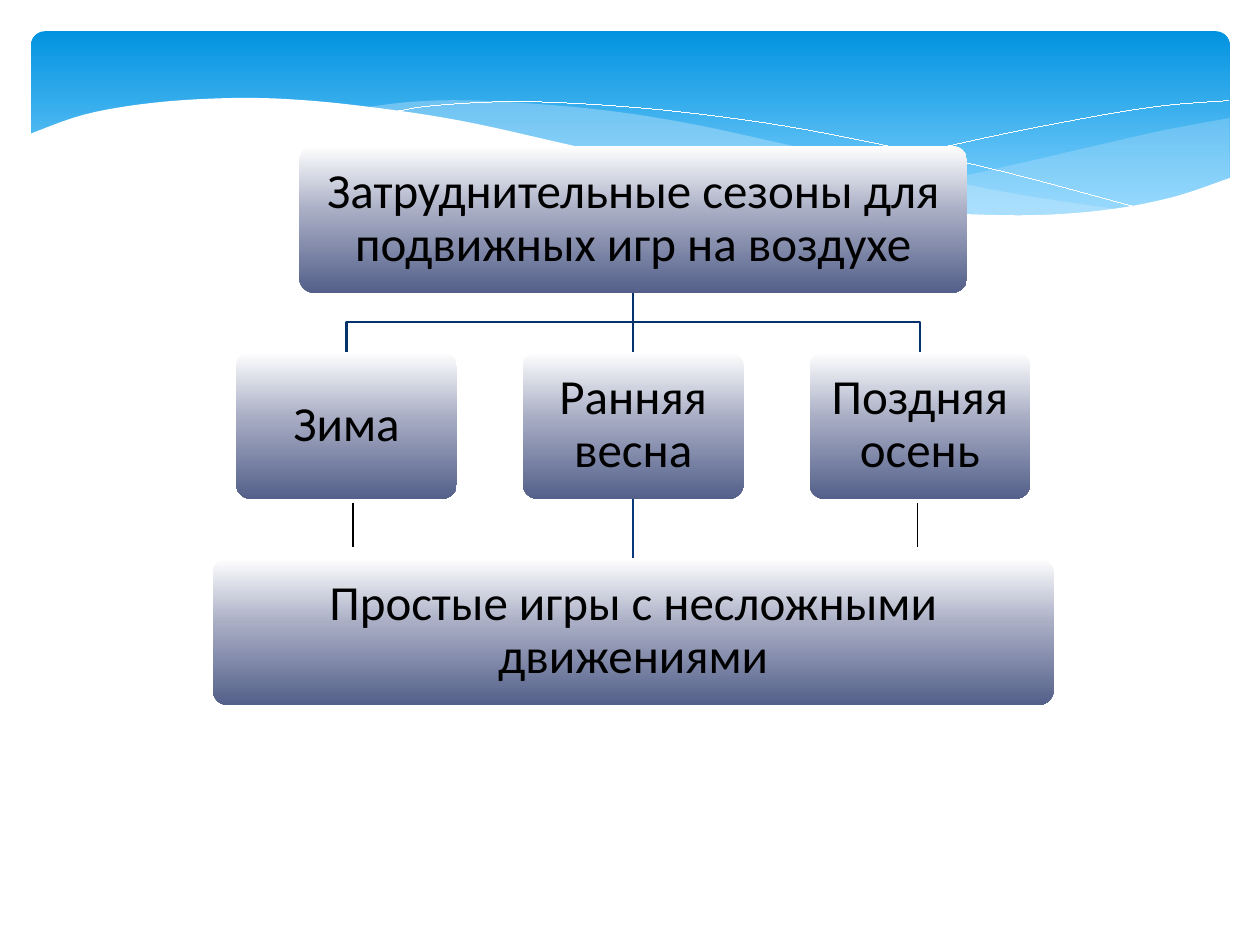
import copy

import pptx
import pptx.dml.color
import pptx.enum.shapes
import pptx.enum.text
import pptx.oxml.ns
import pptx.util
from lxml import etree

Cm = pptx.util.Cm
Pt = pptx.util.Pt
qn = pptx.oxml.ns.qn

COLORS = {
    "sky_top": "0293E0", "sky_bottom": "83D3FE", "wave": "C6E7FC",
    "white": "FFFFFF", "box_middle": "A9AEC5", "box_bottom": "54608A",
    "branch": "06326C", "stem": "06387B", "black": "000000",
}
SKY = [(0, "sky_top"), (0.9, "sky_bottom")]
BOX_FILL = [(0, "white"), (0.44, "box_middle"), (1, "box_bottom")]
HAIRLINE = 0.01
FONT = {"name": "Calibri", "size": Pt(28)}
PARAGRAPH = {"alignment": pptx.enum.text.PP_ALIGN.CENTER, "line_spacing": 0.9}
FRAME = {
    "word_wrap": True, "vertical_anchor": pptx.enum.text.MSO_ANCHOR.MIDDLE,
    "margin_left": Cm(0.25), "margin_right": Cm(0.25),
    "margin_top": Cm(0.3), "margin_bottom": Cm(0.3),
}

# Wave points in cm from the top left corner of the header band
RIGHT_WAVE = [
    [(24.16, 1.75), (22.76, 2.01), (21.23, 2.36), (19.15, 2.84), (17.3, 3.23), (16.15, 3.43)],
    [(16.15, 3.43), (17.63, 3.61), (19.2, 3.73), (20.57, 3.73), (21.74, 3.61),
     (22.94, 3.38), (24.16, 2.95)],
]
MIDDLE_WAVE = [
    [(22.05, 3.61), (19.86, 3.28), (17.3, 2.77), (15.34, 2.31), (13.11, 1.83),
     (11.18, 1.55), (9.02, 1.4), (7.7, 1.42), (6.63, 1.55)],
    [(6.63, 1.55), (8.05, 1.75), (9.63, 2.06), (11.84, 2.57), (14.2, 3.07),
     (16.26, 3.45), (18.06, 3.66), (19.86, 3.76), (21.13, 3.71), (22.05, 3.61)],
]
FALLING_LINE = [(7.21, 1.65), (8.1, 1.5), (9.93, 1.42), (12.32, 1.55),
                (14.81, 1.85), (17.02, 2.26), (19.56, 2.82), (22.4, 3.58)]
RISING_LINE = [(14.94, 3.2), (17.02, 2.67), (19.08, 2.18), (21.36, 1.73),
               (22.83, 1.5), (24.13, 1.4)]
WHITE_WAVE = [
    [(24.18, 2.95), (22.99, 3.35), (21.59, 3.61), (19.91, 3.71), (17.81, 3.61),
     (15.27, 3.25), (12.8, 2.74), (10.72, 2.26), (8.64, 1.8), (6.78, 1.52),
     (5.21, 1.37), (3.86, 1.35), (2.39, 1.45), (1.07, 1.68), (-0.05, 2.08)],
    [(-0.05, 5.05), (24.18, 5.05)],
]


def rgb(name):
    return pptx.dml.color.RGBColor.from_string(COLORS[name])


def set_values(target, values):
    for name, value in values.items():
        setattr(target, name, value)


def smooth(points, steps=6):
    """Return a Catmull-Rom curve through the points."""
    if len(points) < 3:
        return points
    padded = [points[0], *points, points[-1]]
    curve = []
    for a, b, c, d in zip(padded, padded[1:], padded[2:], padded[3:]):
        for step in range(steps):
            t = step / steps
            curve.append(tuple(
                q + t / 2 * (r - p + t * (2 * p - 5 * q + 4 * r - s + t * (3 * (q - r) + s - p)))
                for p, q, r, s in zip(a, b, c, d)))
    return curve + [points[-1]]


def add_outline(slide, points, left=0, top=0, fill=None, opacity=100, line=None, width=HAIRLINE):
    placed = [(Cm(left + x), Cm(top + y)) for x, y in points]
    builder = slide.shapes.build_freeform(*placed[0])
    builder.add_line_segments(placed[1:], close=fill is not None)
    shape = builder.convert_to_shape()
    shape.shadow.inherit = False
    if fill:
        shape.fill.solid()
        shape.fill.fore_color.rgb = rgb(fill)
        color = shape._element.spPr.find(qn("a:solidFill"))[0]
        etree.SubElement(color, qn("a:alpha"), val=str(opacity * 1000))
    else:
        shape.fill.background()
    if line:
        shape.line.color.rgb = rgb(line)
        shape.line.width = Pt(width)
    else:
        shape.line.fill.background()


def add_gradient_box(slide, left, top, width, height, corner, stops):
    shape = slide.shapes.add_shape(
        pptx.enum.shapes.MSO_SHAPE.ROUNDED_RECTANGLE, Cm(left), Cm(top), Cm(width), Cm(height))
    shape.adjustments[0] = corner
    shape.shadow.inherit = False
    shape.line.fill.background()
    shape.fill.gradient()
    shape.fill.gradient_angle = 270
    stop_list = shape._element.spPr.find(qn("a:gradFill")).find(qn("a:gsLst"))
    while len(stop_list) < len(stops):
        stop_list.append(copy.deepcopy(stop_list[0]))
    for stop, (position, color) in zip(shape.fill.gradient_stops, stops):
        stop.position = position
        stop.color.rgb = rgb(color)
    return shape


def add_label_box(slide, text, center, top, width, height):
    shape = add_gradient_box(slide, center - width / 2, top, width, height, 0.1, BOX_FILL)
    set_values(shape.text_frame, FRAME)
    paragraph = shape.text_frame.paragraphs[0]
    paragraph.text = text
    set_values(paragraph, PARAGRAPH)
    set_values(paragraph.font, FONT)
    paragraph.font.color.rgb = rgb("black")


def add_vertical_line(slide, x, top, bottom, color, width):
    connector = slide.shapes.add_connector(
        pptx.enum.shapes.MSO_CONNECTOR.STRAIGHT, Cm(x), Cm(top), Cm(x), Cm(bottom))
    connector.line.color.rgb = rgb(color)
    connector.line.width = Pt(width)
    etree.SubElement(connector._element.spPr, qn("a:effectLst"))


def add_header(slide, left, top, width, height):
    add_gradient_box(slide, left, top, width, height, 0.07, SKY)
    for wave, color, opacity in ((RIGHT_WAVE, "wave", 29), (MIDDLE_WAVE, "wave", 40)):
        points = [point for edge in wave for point in smooth(edge)]
        add_outline(slide, points, left, top, fill=color, opacity=opacity)
    for curve in (FALLING_LINE, RISING_LINE):
        add_outline(slide, smooth(curve), left, top, line="white")
    points = [point for edge in WHITE_WAVE for point in smooth(edge)]
    add_outline(slide, points, left, top, fill="white")


def add_season_tree(slide, left, top, width, height):
    box_height, column_width, column_pitch = 2.96, 4.45, 5.78
    gap = (height - 3 * box_height) / 2
    center = left + width / 2
    levels = [top + row * (box_height + gap) for row in range(3)]
    bottoms = [level + box_height for level in levels]

    # Branches from the heading to the seasons, and the stem below
    for side in (-1, 1):
        x, middle = center + side * column_pitch, bottoms[0] + gap / 2
        elbow = [(center, bottoms[0]), (center, middle), (x, middle), (x, levels[1])]
        add_outline(slide, elbow, line="branch", width=1.25)
    add_vertical_line(slide, center, bottoms[0], levels[1], "branch", 1.25)
    add_vertical_line(slide, center, bottoms[1], levels[2], "stem", 1.25)

    # Boxes
    add_label_box(slide, "Затруднительные сезоны для подвижных игр на воздухе",
                  center, levels[0], 13.46, box_height)
    for column, season in enumerate(("Зима", "Ранняя весна", "Поздняя осень"), -1):
        add_label_box(slide, season, center + column * column_pitch,
                      levels[1], column_width, box_height)
    add_label_box(slide, "Простые игры с несложными движениями",
                  center, levels[2], width, box_height)

    # Thin lines under the outer seasons
    for offset in (-5.65, 5.73):
        add_vertical_line(slide, center + offset, bottoms[1] + 0.08,
                          bottoms[1] + 0.97, "black", 0.75)


def main():
    presentation = pptx.Presentation()
    presentation.slide_width, presentation.slide_height = Cm(25.4), Cm(19.05)
    slide = presentation.slides.add_slide(presentation.slide_layouts[6])
    add_header(slide, 0.63, 0.63, 24.16, 3.96)
    add_season_tree(slide, 4.29, 2.94, 16.95, 11.27)
    presentation.save("out.pptx")


if __name__ == "__main__":
    main()
